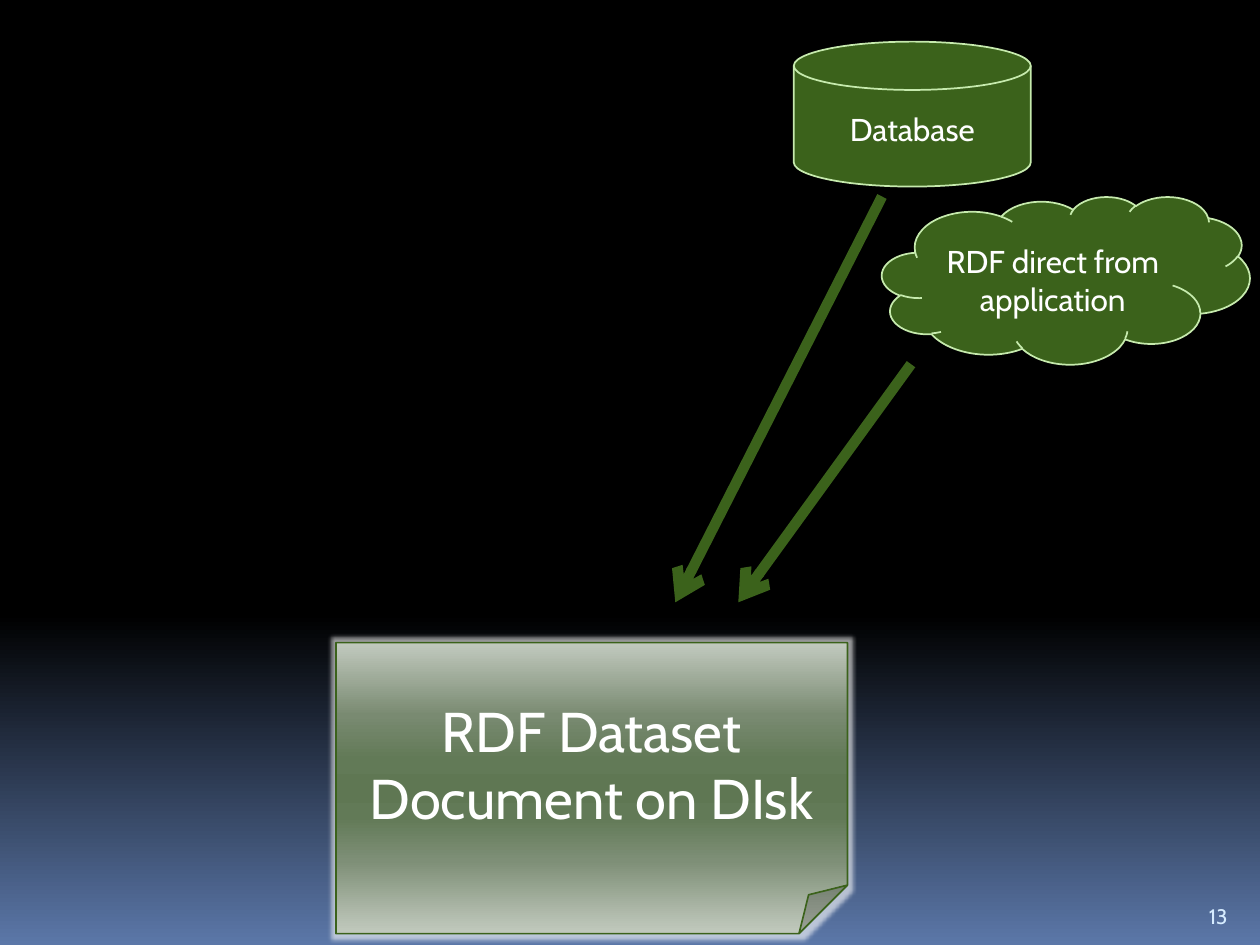
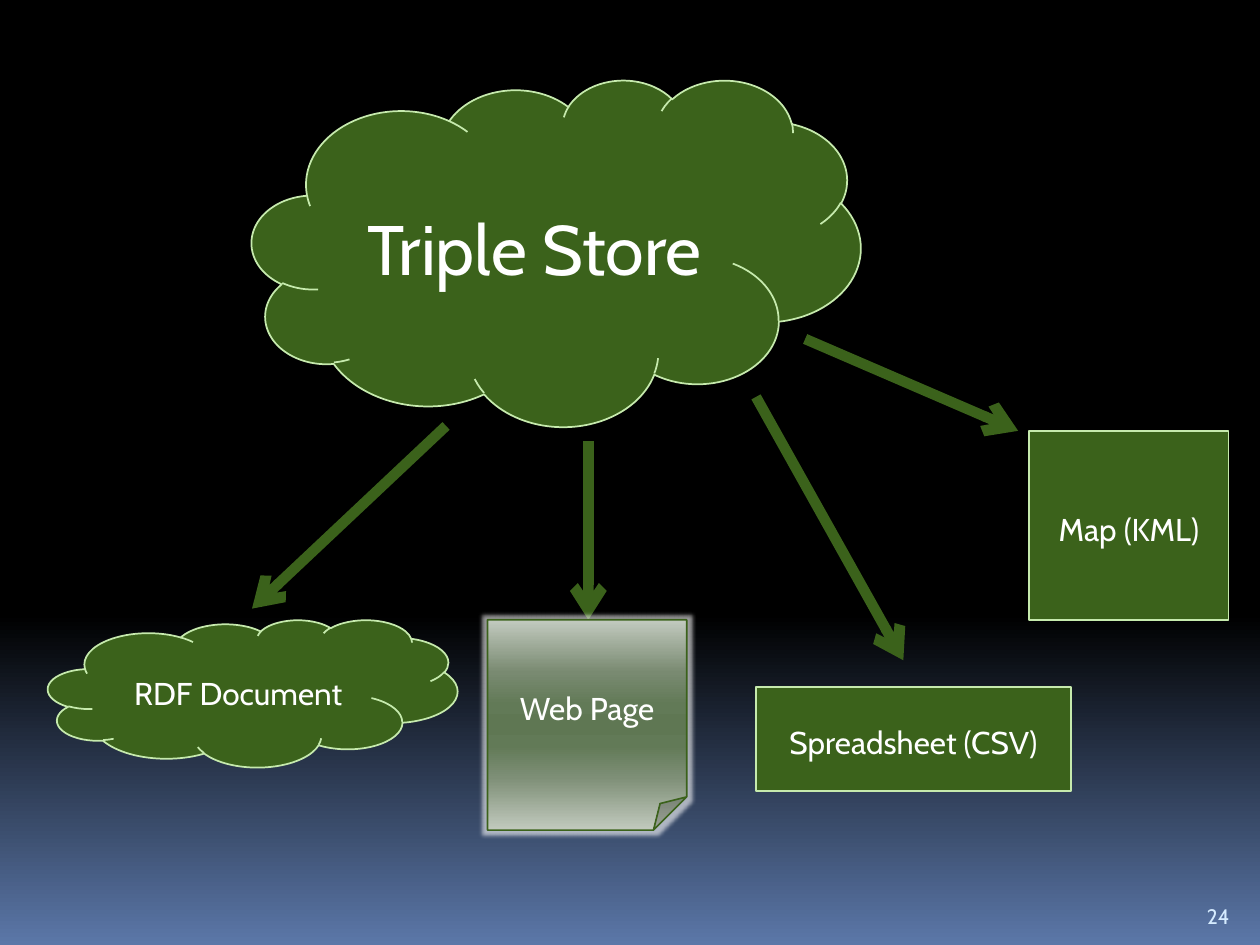
from typing import NamedTuple

from lxml.etree import SubElement
from pptx import Presentation
from pptx.dml.color import RGBColor
from pptx.enum.shapes import MSO_CONNECTOR as Connector, MSO_SHAPE as Kind
from pptx.enum.text import MSO_ANCHOR as Anchor, PP_ALIGN as Align
from pptx.oxml.ns import qn
from pptx.util import Pt

FONT = "Cabin"
GREEN, PALE_GREEN = "3B621B", "C6EAAD"
WHITE, NUMBER_BLUE = "FFFFFF", "D6ECFF"
SKY_STOPS = [(0, "000000"), (65, "000000"), (100, "5B77A8")]
PAPER_STOPS = [(0, "C2CABF"), (25, "798A71"), (40, "627A57"), (50, "5F7753"),
               (60, "627A57"), (75, "7E8F77"), (100, "C2CABE")]
CENTRED = {"word_wrap": True, "vertical_anchor": Anchor.MIDDLE}
NODE_FRAME = CENTRED | {"margin_bottom": Pt(0)}
NUMBER_FRAME = {"word_wrap": True, "vertical_anchor": Anchor.BOTTOM}


class Node(NamedTuple):
    text: str
    kind: Kind
    left: float
    top: float
    width: float
    height: float
    size: int = 18


class Arrow(NamedTuple):
    start_x: float
    start_y: float
    end_x: float
    end_y: float


class Diagram(NamedTuple):
    number: int
    arrows: list[Arrow]
    nodes: list[Node]


DIAGRAMS = [
    Diagram(
        13,
        [Arrow(504, 112.3, 385.9, 344.2), Arrow(520.6, 208.1, 421.9, 344.2)],
        [
            Node("RDF direct from application", Kind.CLOUD, 504, 112.3, 210.2, 95.8),
            Node("Database", Kind.FLOWCHART_MAGNETIC_DISK, 453.6, 23.8, 135.4, 82.8),
            Node("RDF Dataset Document on DIsk", Kind.FOLDED_CORNER,
                 192, 367.2, 292.3, 166.3, 32),
        ],
    ),
    Diagram(
        24,
        [
            Arrow(432, 226.8, 516.2, 377.3),
            Arrow(336.2, 252, 336.2, 354.2),
            Arrow(254.9, 243.4, 144, 347.8),
            Arrow(460.1, 193.7, 581.8, 246.2),
        ],
        [
            Node("Triple Store", Kind.CLOUD, 144, 45.4, 347.8, 198, 40),
            Node("Spreadsheet (CSV)", Kind.RECTANGLE, 432, 392.4, 180, 59.8),
            Node("RDF Document", Kind.CLOUD, 27.4, 354.2, 234, 84.2),
            Node("Map (KML)", Kind.RECTANGLE, 588.2, 246.2, 113.8, 108),
            Node("Web Page", Kind.FOLDED_CORNER, 278.6, 354.2, 113.8, 120.2),
        ],
    ),
]


def color(value: str) -> RGBColor:
    return RGBColor.from_string(value)


def set_attributes(target, values: dict) -> None:
    for name, value in values.items():
        setattr(target, name, value)


def paint_gradient(fill, owner, stops: list[tuple[int, str]]) -> None:
    """Fill from top to bottom; owner is the XML element that holds the fill."""
    fill.gradient()
    fill.gradient_angle = 270
    stop_list = owner.find(".//" + qn("a:gsLst"))
    for old_stop in list(stop_list):
        stop_list.remove(old_stop)
    for percent, value in stops:
        stop = SubElement(stop_list, qn("a:gs"), pos=str(percent * 1000))
        SubElement(stop, qn("a:srgbClr"), val=value)


def add_glow(shape) -> None:
    effects = shape._element.spPr.find(qn("a:effectLst"))
    glow = SubElement(effects, qn("a:glow"), rad=str(Pt(5)))
    tint = SubElement(glow, qn("a:srgbClr"), val=WHITE)
    SubElement(tint, qn("a:alpha"), val="60000")


def write(box, text: str, size: int, ink: str, frame_format: dict) -> None:
    set_attributes(box.text_frame, frame_format)
    para = box.text_frame.paragraphs[0]
    para.alignment = Align.CENTER
    span = para.add_run()
    span.text = text
    set_attributes(span.font, {"name": FONT, "size": Pt(size)})
    span.font.color.rgb = color(ink)


def draw_node(page, node: Node) -> None:
    shape = page.shapes.add_shape(node.kind, Pt(node.left), Pt(node.top),
                                  Pt(node.width), Pt(node.height))
    shape.shadow.inherit = False
    is_paper = node.kind == Kind.FOLDED_CORNER
    if is_paper:
        paint_gradient(shape.fill, shape._element, PAPER_STOPS)
        add_glow(shape)
    else:
        shape.fill.solid()
        shape.fill.fore_color.rgb = color(GREEN)
    shape.line.color.rgb = color(GREEN if is_paper else PALE_GREEN)
    shape.line.width = Pt(0.94 if is_paper else 1)
    write(shape, node.text, node.size, WHITE, CENTRED if is_paper else NODE_FRAME)


def draw_arrow(page, arrow: Arrow) -> None:
    connector = page.shapes.add_connector(Connector.STRAIGHT, *map(Pt, arrow))
    connector.line.color.rgb = color(GREEN)
    connector.line.width = Pt(6)
    SubElement(connector.line._get_or_add_ln(), qn("a:tailEnd"), type="arrow")
    SubElement(connector._element.spPr, qn("a:effectLst"))


def draw_page_number(page, number: int) -> None:
    box = page.shapes.add_textbox(Pt(678.2), Pt(505.4), Pt(36), Pt(28.8))
    write(box, str(number), 12, NUMBER_BLUE, NUMBER_FRAME)


def draw_diagram(deck, diagram: Diagram) -> None:
    page = deck.slides.add_slide(deck.slide_layouts[6])
    paint_gradient(page.background.fill, page._element, SKY_STOPS)
    draw_page_number(page, diagram.number)
    for arrow in diagram.arrows:
        draw_arrow(page, arrow)
    for node in diagram.nodes:
        draw_node(page, node)


def main() -> None:
    deck = Presentation()
    set_attributes(deck, {"slide_width": Pt(720), "slide_height": Pt(540)})
    for diagram in DIAGRAMS:
        draw_diagram(deck, diagram)
    deck.save("out.pptx")


if __name__ == "__main__":
    main()
